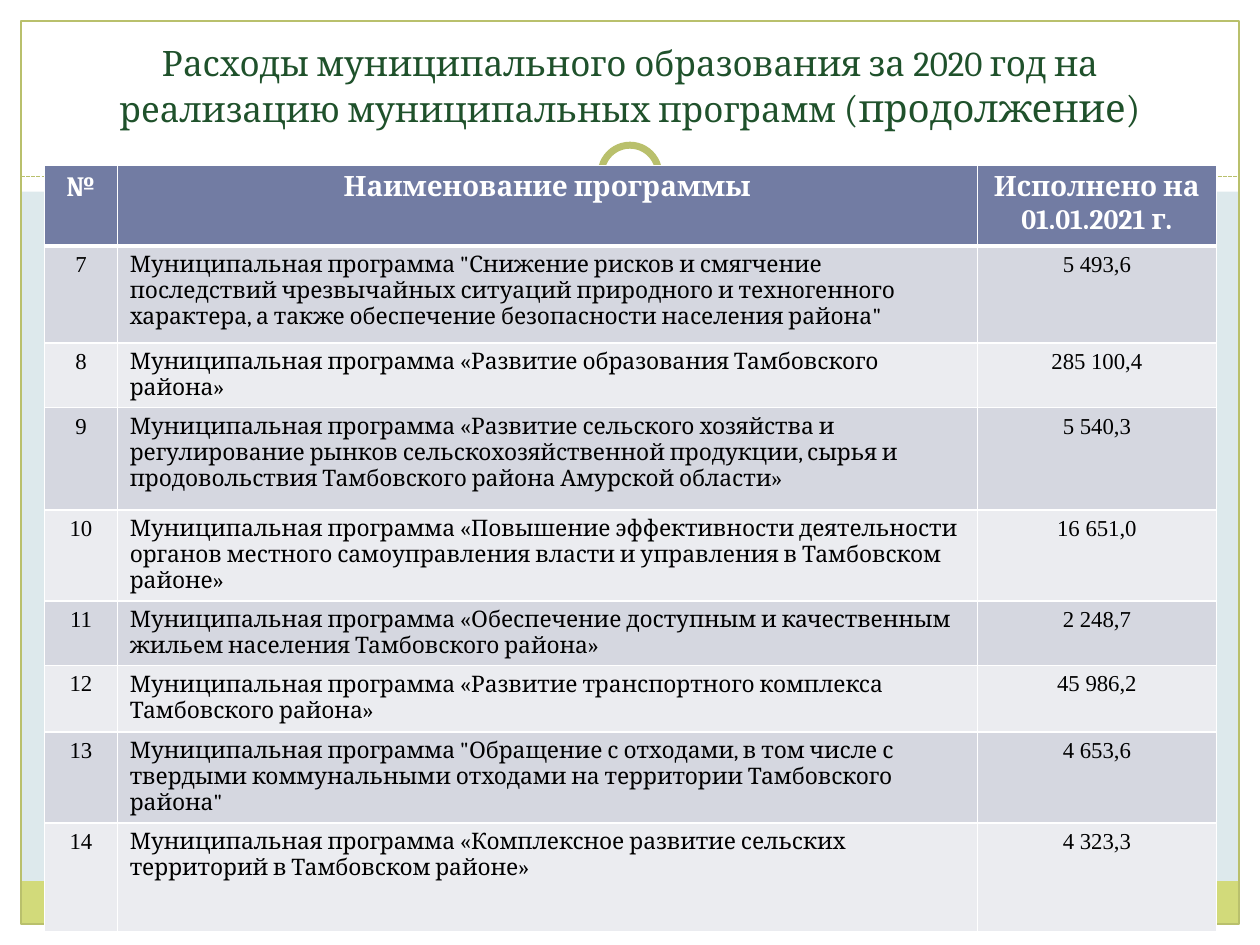
"""Build a slide with a table of municipal programme spending."""
import pptx
import pptx.dml.color
import pptx.enum.dml
import pptx.enum.shapes
import pptx.enum.text
import pptx.oxml
import pptx.oxml.ns
import pptx.util
from dataclasses import dataclass

Pt = pptx.util.Pt
Shape = pptx.enum.shapes.MSO_SHAPE
Align = pptx.enum.text.PP_ALIGN


@dataclass(frozen=True)
class Theme:
    back: str = "DDE9EC"
    white: str = "FFFFFF"
    black: str = "000000"
    green: str = "1F512B"
    olive: str = "B9C06C"
    lime: str = "D2DA7A"
    head: str = "727CA3"
    bands: tuple = ("D5D7E0", "EBECF0")
    serif: str = "Cambria"
    roman: str = "Times New Roman"
    title: int = 20
    more: int = 22
    label: int = 16
    body: int = 13


look = Theme()
TITLE = (
    ("Расходы муниципального образования за 2020 год на реализацию муниципальных программ ", look.title),
    ("(продолжение)", look.more),
)
HEAD = ("№", "Наименование программы", "Исполнено на 01.01.2021 г.")
ITEMS = (
    ("7", 'Муниципальная программа "Снижение рисков и смягчение последствий чрезвычайных ситуаций природного и техногенного характера, а также обеспечение безопасности населения района"', "5 493,6"),
    ("8", "Муниципальная программа «Развитие образования Тамбовского района»", "285 100,4"),
    ("9", "Муниципальная программа «Развитие сельского хозяйства и регулирование рынков сельскохозяйственной продукции, сырья и продовольствия Тамбовского района Амурской области»", "5 540,3"),
    ("10", "Муниципальная программа «Повышение эффективности деятельности органов местного самоуправления власти и управления в Тамбовском районе»", "16 651,0"),
    ("11", "Муниципальная программа «Обеспечение доступным и качественным жильем населения Тамбовского района»", "2 248,7"),
    ("12", "Муниципальная программа «Развитие транспортного комплекса Тамбовского района»", "45 986,2"),
    ("13", 'Муниципальная программа "Обращение с отходами, в том числе с твердыми коммунальными отходами на территории Тамбовского района"', "4 653,6"),
    ("14", "Муниципальная программа «Комплексное развитие сельских территорий в Тамбовском районе»", "4 323,3"),
)
WIDE, HIGH, EDGE = 720, 540, 12
COLS = (41.5, 491.5, 136.5)
ROWS = (46, 55.5, 34, 58.5, 51, 36.5, 38, 38, 62.5)
PANES = (
    (Shape.RECTANGLE, (0, HIGH - EDGE, WIDE, EDGE), look.white, None),
    (Shape.RECTANGLE, (0, 0, WIDE, 109.5), look.white, None),
    (Shape.RECTANGLE, (0, 0, EDGE, HIGH), look.white, None),
    (Shape.RECTANGLE, (WIDE - EDGE, 0, EDGE, HIGH), look.white, None),
    (Shape.RECTANGLE, (EDGE, 503.5, WIDE - 2 * EDGE, 24.5), look.lime, None),
    (Shape.RECTANGLE, (EDGE, EDGE, WIDE - 2 * EDGE, HIGH - 2 * EDGE), None, 0.75),
)
RINGS = (
    (Shape.OVAL, (336, 75.5, 48, 48), look.white, None),
    (Shape.OVAL, (343.5, 83, 33, 33), look.white, 4),
)


def tint(code):
    return pptx.dml.color.RGBColor.from_string(code)


def paint(fill, code):
    fill.solid()
    fill.fore_color.rgb = tint(code)


def style(run, face, size, code, bold=False):
    run.font.name, run.font.size, run.font.bold = face, Pt(size), bold
    run.font.color.rgb = tint(code)


def draw(slide, parts):
    for kind, box, fill, line in parts:
        shape = slide.shapes.add_shape(kind, *map(Pt, box))
        shape.shadow.inherit = False
        if fill:
            paint(shape.fill, fill)
        else:
            shape.fill.background()
        if line:
            shape.line.color.rgb = tint(look.olive)
            shape.line.width = Pt(line)
        else:
            shape.line.fill.background()


def dash(slide, top):
    line = slide.shapes.add_connector(
        pptx.enum.shapes.MSO_CONNECTOR.STRAIGHT, *map(Pt, (EDGE, top, WIDE - EDGE, top)))
    line.line.color.rgb = tint(look.olive)
    line.line.width = Pt(0.75)
    line.line.dash_style = pptx.enum.dml.MSO_LINE.SQUARE_DOT
    props = line._element.spPr
    props.append(props.makeelement(pptx.oxml.ns.qn("a:effectLst"), {}))


def name(slide):
    title = slide.shapes.title
    title.left, title.top, title.width, title.height = map(Pt, (24, 18, 672, 60))
    frame = title.text_frame
    frame.word_wrap = True
    frame.auto_size = pptx.enum.text.MSO_AUTO_SIZE.NONE
    frame.vertical_anchor = pptx.enum.text.MSO_ANCHOR.BOTTOM
    para = frame.paragraphs[0]
    para.alignment = Align.CENTER
    for text, size in TITLE:
        run = para.add_run()
        run.text = text
        style(run, look.serif, size, look.green)
    slide.shapes._spTree.append(title._element)


def rule(cell, row):
    props = cell._tc.get_or_add_tcPr()
    thick = {"lnT": row == 1, "lnB": row == 0}
    for side in ("lnL", "lnR", "lnT", "lnB"):
        width = Pt(3 if thick.get(side) else 1)
        props.append(pptx.oxml.parse_xml(
            f'<a:{side} {pptx.oxml.ns.nsdecls("a")} w="{width}"><a:solidFill>'
            f'<a:srgbClr val="{look.white}"/></a:solidFill></a:{side}>'))


def fill_table(slide):
    grid = slide.shapes.add_table(
        len(ROWS), len(COLS), *map(Pt, (25.5, 94.5, sum(COLS), sum(ROWS)))).table
    grid.horz_banding = False
    for col, width in zip(grid.columns, COLS):
        col.width = Pt(width)
    for row, texts in enumerate((HEAD, *ITEMS)):
        grid.rows[row].height = Pt(ROWS[row])
        for col, text in enumerate(texts):
            cell = grid.cell(row, col)
            rule(cell, row)
            paint(cell.fill, look.bands[(row - 1) % 2] if row else look.head)
            cell.text_frame.text = text
            para = cell.text_frame.paragraphs[0]
            para.alignment = Align.LEFT if row and col == 1 else Align.CENTER
            if row:
                face = look.serif if col == 1 else look.roman
                style(para.runs[0], face, look.body, look.black)
            else:
                style(para.runs[0], look.serif, look.label, look.white, True)


def main():
    deck = pptx.Presentation()
    deck.slide_width, deck.slide_height = Pt(WIDE), Pt(HIGH)
    slide = deck.slides.add_slide(deck.slide_layouts[5])
    paint(slide.background.fill, look.back)
    draw(slide, PANES)
    dash(slide, 101)
    draw(slide, RINGS)
    name(slide)
    fill_table(slide)
    deck.save("out.pptx")


if __name__ == "__main__":
    main()
